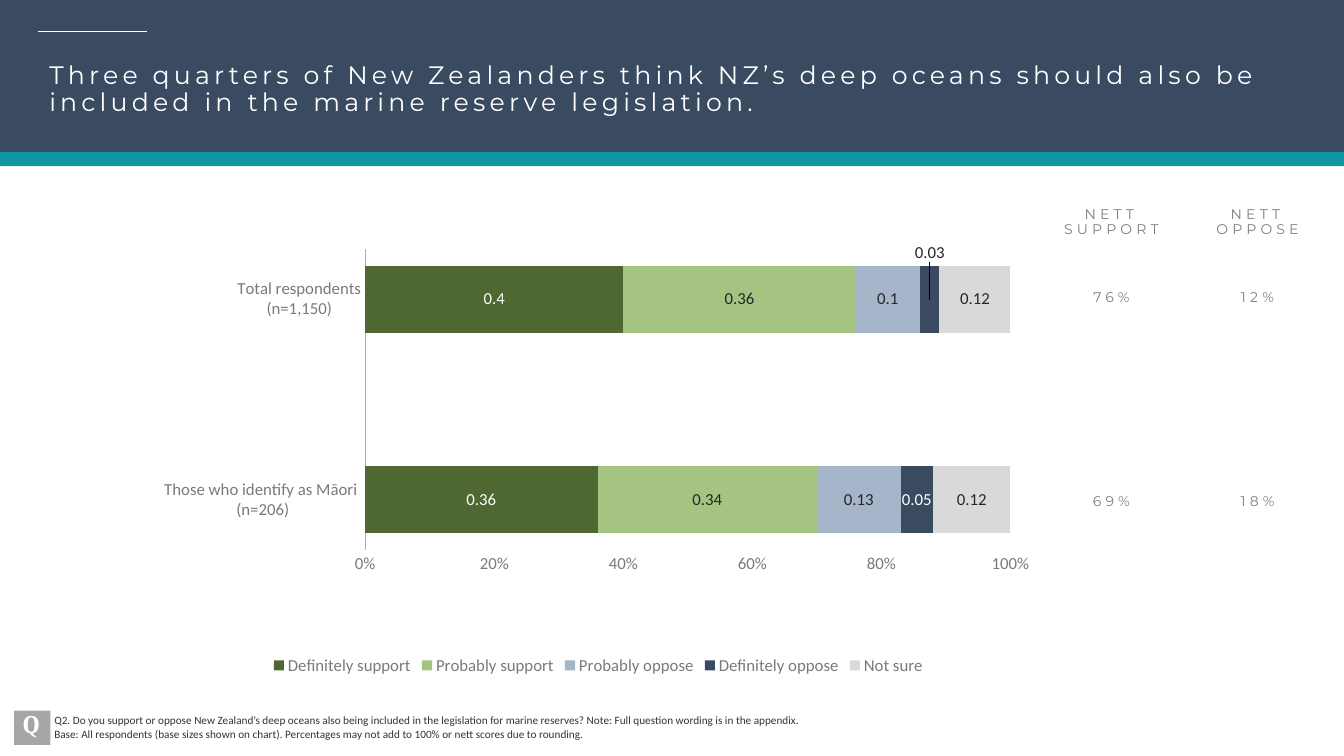
from lxml import etree
from pptx import Presentation
from pptx.chart.data import CategoryChartData
from pptx.dml.color import RGBColor
from pptx.enum.chart import XL_CHART_TYPE as ChartType, XL_LABEL_POSITION as LabelPos
from pptx.enum.chart import XL_LEGEND_POSITION as LegendPos, XL_TICK_MARK as Tick
from pptx.enum.shapes import MSO_CONNECTOR as Connector, MSO_SHAPE as Shape
from pptx.enum.text import MSO_ANCHOR as Anchor, PP_ALIGN as Align
from pptx.oxml.ns import qn
from pptx.util import Inches, Pt

NAVY = RGBColor(0x3A, 0x4A, 0x60)
TEAL = RGBColor(0x0E, 0x96, 0xA3)
WHITE = RGBColor(0xFF, 0xFF, 0xFF)
BADGE_GREY = RGBColor(0xA6, 0xA6, 0xA6)
NOTE_GREY = RGBColor(0x33, 0x33, 0x33)
NETT_GREY = RGBColor(0x80, 0x80, 0x80)
AXIS_TEXT = RGBColor(0x7A, 0x7A, 0x7A)
AXIS_LINE = RGBColor(0xAD, 0xAD, 0xAD)
LABEL_DARK = RGBColor(0x26, 0x26, 0x26)
DARK_GREEN = RGBColor(0x4F, 0x67, 0x30)
LIGHT_GREEN = RGBColor(0xA6, 0xC4, 0x81)
LIGHT_BLUE = RGBColor(0xA6, 0xB5, 0xC9)
PALE_GREY = RGBColor(0xD9, 0xD9, 0xD9)

COLUMNS, ROWS = 96, 54

CATEGORIES = ["Those who identify as Māori \n(n=206)", "", "Total respondents\n(n=1,150)"]
ANSWERS = [  # name, values, bar colour, label colour
    ("Definitely support", (0.36, None, 0.4), DARK_GREEN, WHITE),
    ("Probably support", (0.34, None, 0.36), LIGHT_GREEN, LABEL_DARK),
    ("Probably oppose", (0.13, None, 0.1), LIGHT_BLUE, LABEL_DARK),
    ("Definitely oppose", (0.05, None, 0.03), NAVY, LABEL_DARK),
    ("Not sure", (0.12, None, 0.12), PALE_GREY, LABEL_DARK),
]
NETT_COLUMNS = (74.74, 85.18)
NETT_ROWS = [
    (12.38, ("NETT SUPPORT", "NETT OPPOSE")),
    (17.78, ("76%", "12%")),
    (32.33, ("69%", "18%")),
]


def set_font(font, size, color, name="Calibri", bold=False):
    font.size, font.name, font.bold = Pt(size), name, bold
    font.color.rgb = color


def manual_layout(**settings):
    """Return a chart layout element holding the given settings in order."""
    layout = etree.Element(qn("c:layout"))
    manual = etree.SubElement(layout, qn("c:manualLayout"))
    for tag, value in settings.items():
        etree.SubElement(manual, qn(f"c:{tag}")).set("val", str(value))
    return layout


class SlideBuilder:
    """Draws on one slide; lengths are in grid columns and rows."""

    def __init__(self, prs):
        self.slide = prs.slides.add_slide(prs.slide_layouts[6])
        self.shapes = self.slide.shapes
        self.col = prs.slide_width / COLUMNS
        self.row = prs.slide_height / ROWS

    def place(self, x, y, w, h):
        return (round(x * self.col), round(y * self.row),
                round(w * self.col), round(h * self.row))

    def block(self, x, y, w, h, color):
        s = self.shapes.add_shape(Shape.RECTANGLE, *self.place(x, y, w, h))
        s.shadow.inherit = False
        s.fill.solid()
        s.fill.fore_color.rgb = color
        s.line.fill.background()

    def rule(self, x1, y1, x2, y2, color, width):
        s = self.shapes.add_connector(Connector.STRAIGHT, *self.place(x1, y1, x2, y2))
        s.line.color.rgb = color
        s.line.width = Pt(width)
        etree.SubElement(s.element.spPr, qn("a:effectLst"))

    def text(self, x, y, w, h, text, size, color, font="Calibri", bold=False,
             align=Align.LEFT, anchor=Anchor.TOP, line_spacing=None, tracking=0):
        """Add a wrapped text box; tracking is letter spacing in points."""
        tf = self.shapes.add_textbox(*self.place(x, y, w, h)).text_frame
        tf.word_wrap = True
        tf.vertical_anchor = anchor
        tf.text = text
        for p in tf.paragraphs:
            p.alignment = align
            p.line_spacing = line_spacing
            for r in p.runs:
                set_font(r.font, size, color, font, bold)
                if tracking:
                    r.font._element.set("spc", str(tracking * 100))

    def spaced_text(self, x, y, w, h, text, size, color, **options):
        self.text(x, y, w, h, text, size, color, "Montserrat",
                  line_spacing=0.9, tracking=3, **options)

    def stacked_bars(self, x, y, w, h, categories, answers):
        data = CategoryChartData()
        data.categories = categories
        for name, values, *_ in answers:
            data.add_series(name, values)
        chart = self.shapes.add_chart(
            ChartType.BAR_STACKED, *self.place(x, y, w, h), data).chart
        chart.has_title = False
        set_font(chart.font, 10, NOTE_GREY)
        plot = chart.plots[0]
        plot.gap_width, plot.overlap = 50, 100
        plot.vary_by_categories = False
        for series, (_, _, fill, label) in zip(plot.series, answers):
            self.style_series(series, fill, label)
        self.style_axes(chart)

        chart.has_legend = True
        chart.legend.position = LegendPos.BOTTOM
        chart.legend.include_in_layout = False
        set_font(chart.legend.font, 12, AXIS_TEXT)

        area = chart._chartSpace.chart.plotArea
        for old in area.findall(qn("c:layout")):
            area.remove(old)
        area.insert(0, manual_layout(layoutTarget="inner", xMode="edge", yMode="edge",
                                     x=0.24, y=0.07, w=0.72, h=0.65))
        return chart

    def style_series(self, series, fill, label):
        series.format.fill.solid()
        series.format.fill.fore_color.rgb = fill
        labels = series.data_labels
        labels.show_value = True
        labels.position = LabelPos.CENTER
        set_font(labels.font, 12, label)

    def style_axes(self, chart):
        for axis in (chart.category_axis, chart.value_axis):
            axis.major_tick_mark = axis.minor_tick_mark = Tick.NONE
            axis.has_major_gridlines = False
            set_font(axis.tick_labels.font, 12, AXIS_TEXT)
        line = chart.category_axis.format.line
        line.color.rgb, line.width = AXIS_LINE, Pt(0.75)
        values = chart.value_axis
        values.format.line.fill.background()
        values.minimum_scale, values.maximum_scale, values.major_unit = 0, 1, 0.2
        values.tick_labels.number_format = "0%"
        values.tick_labels.number_format_is_linked = False

    def point_label(self, series, index, color, rise=0):
        """Restyle one label and lift it by a share of the chart's height."""
        label = series.points[index].data_label
        set_font(label.font, 12, color)
        label.position = LabelPos.CENTER
        if rise:
            idx = series._element.xpath(f"c:dLbls/c:dLbl/c:idx[@val='{index}']")[0]
            idx.addnext(manual_layout(x=0, y=-rise))


def main():
    prs = Presentation()
    prs.slide_width, prs.slide_height = Inches(13.33), Inches(7.5)
    b = SlideBuilder(prs)

    b.block(0, 0, COLUMNS, 11.52, NAVY)
    b.rule(2.74, 2.25, 10.51, 2.25, WHITE, 0.5)
    b.block(0, 10.87, COLUMNS, 1.01, TEAL)
    b.spaced_text(2.81, 4.1, 89.86, 3.53,
                  "Three quarters of New Zealanders think NZ’s deep oceans should also be "
                  "included in the marine reserve legislation.", 18, WHITE)

    b.block(1.01, 50.76, 2.59, 2.45, BADGE_GREY)
    b.text(0.94, 50.26, 3.24, 2.88, "Q", 18, WHITE, "Cambria", bold=True)
    b.text(3.17, 50.62, 59.9, 2.66,
           "Q2. Do you support or oppose New Zealand’s deep oceans also being included in the "
           "legislation for marine reserves? Note: Full question wording is in the appendix.\n"
           "Base: All respondents (base sizes shown on chart). Percentages may not add to 100% "
           "or nett scores due to rounding.", 8, NOTE_GREY)

    chart = b.stacked_bars(10.73, 15.48, 64.01, 33.05, CATEGORIES, ANSWERS)
    definitely_oppose = chart.plots[0].series[3]
    b.point_label(definitely_oppose, 0, WHITE)
    b.point_label(definitely_oppose, 2, LABEL_DARK, rise=0.1)

    for y, cells in NETT_ROWS:
        for x, cell in zip(NETT_COLUMNS, cells):
            b.spaced_text(x, y, 9.29, 7.06, cell, 10, NETT_GREY,
                          align=Align.CENTER, anchor=Anchor.MIDDLE)

    prs.save("out.pptx")


if __name__ == "__main__":
    main()
